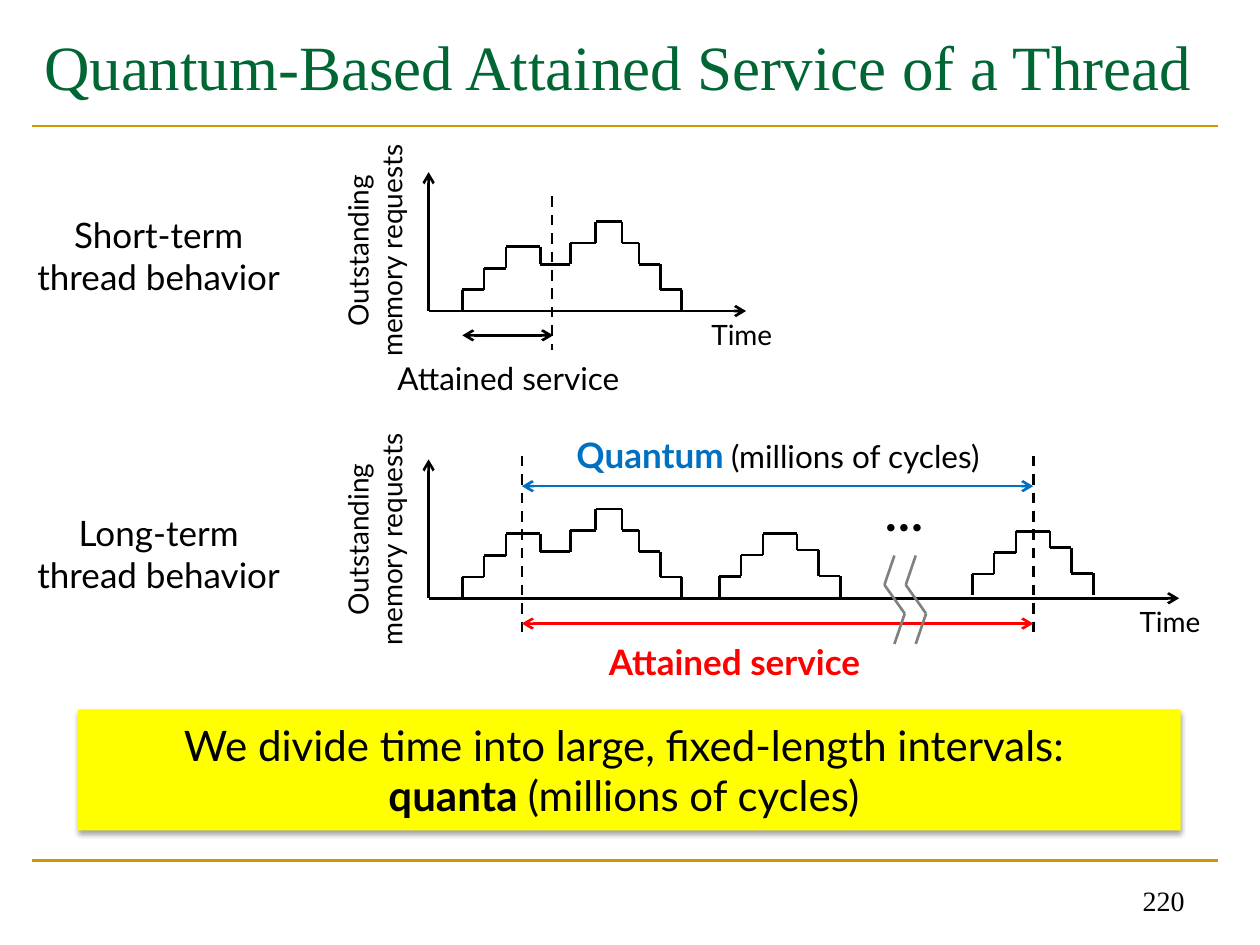
"""Build the slide on quantum-based attained service of a thread."""
from itertools import pairwise

from lxml.etree import SubElement
from pptx import Presentation
from pptx.dml.color import RGBColor
from pptx.enum.dml import MSO_LINE
from pptx.enum.shapes import MSO_CONNECTOR, MSO_SHAPE
from pptx.enum.text import MSO_ANCHOR, PP_ALIGN
from pptx.oxml.ns import qn
from pptx.util import Cm, Pt

BLACK, GREEN, GOLD, GRAY = "000000", "006633", "CC9900", "808080"
RED, BLUE, YELLOW = "FF0000", "0070C0", "FFFF00"
SANS, SERIF = "Lato", "Times New Roman"

TITLE = "Quantum-Based Attained Service of a Thread"
TITLE_BOX = (0.64, 0.43, 23.93, 2.97)
PAGE_NUMBER = "220"
PAGE_NUMBER_BOX = (18.21, 17.35, 5.92, 1.27)
RULE_LEFT, RULE_RIGHT, RULE_TOPS = 0.64, 24.56, (2.54, 17.35)

AXIS_LEFT, AXIS_HEIGHT = 8.64, 2.8
CHARTS = [
    {"name": "Short-term\nthread behavior", "name_top": 4.17, "label_top": 4.24,
     "base": 6.27, "axis_right": 15.04, "time_left": 14},
    {"name": "Long-term\nthread behavior", "name_top": 10.19, "label_top": 10.06,
     "base": 12.06, "axis_right": 23.77, "time_left": 22.63},
]

DOUBLE_EDGES = (0, 0.44, 0.88, 1.57, 2.18, 2.69, 3.22, 3.56, 3.99, 4.42)
DOUBLE_LEVELS = (0.43, 0.86, 1.3, 0.94, 1.37, 1.8, 1.37, 0.94, 0.43)
SINGLE_EDGES = (0, 0.44, 0.88, 1.57, 2, 2.44)
SINGLE_LEVELS = (0.42, 0.85, 1.28, 0.95, 0.43)
BURSTS = [
    (9.32, 6.27, DOUBLE_EDGES, DOUBLE_LEVELS),
    (9.32, 12.06, DOUBLE_EDGES, DOUBLE_LEVELS),
    (14.5, 12.04, SINGLE_EDGES, SINGLE_LEVELS),
    (19.6, 11.99, SINGLE_EDGES, SINGLE_LEVELS),
]

DASHED_MARKS = [(11.13, 3.96, 7.06), (10.52, 9.19, 12.78), (20.83, 9.19, 12.78)]
SPANS = [(9.32, 11.15, 6.76, BLACK), (10.52, 20.83, 12.57, RED),
         (10.52, 20.83, 9.8, BLUE)]
AXIS_BREAK = [(18.03, 11.2), (17.83, 11.79), (18.24, 12.37), (18.03, 12.98)]
AXIS_BREAK_SHIFTS = (0, 0.43)

LABELS = [
    ((7.39, 7.11, 5.72, 1.04), [("Attained service", 18, BLACK, False)]),
    ((11.56, 12.78, 6.5, 1.12), [("Attained service", 20, RED, True)]),
    ((17.27, 9.6, 1.91, 1.45), [("…", 28, BLACK, True)]),
    ((10.72, 8.61, 9.93, 1.12), [("Quantum", 20, BLUE, True),
                                 (" ", 16, BLACK, False),
                                 ("(millions of cycles)", 18, BLACK, False)]),
]
MESSAGE_BOX = (1.57, 14.3, 22.23, 2.44)
MESSAGE = [
    [("We divide time into large, fixed-length intervals: ", 24, BLACK, False)],
    [("quanta ", 24, BLACK, True), ("(millions of cycles) ", 24, BLACK, False)],
]


def color(value):
    return RGBColor.from_string(value)


def write(shape, paragraphs, font=SANS, align=PP_ALIGN.CENTER, anchor=MSO_ANCHOR.TOP):
    frame = shape.text_frame
    frame.word_wrap = True
    frame.vertical_anchor = anchor
    for index, pieces in enumerate(paragraphs):
        paragraph = frame.add_paragraph() if index else frame.paragraphs[0]
        paragraph.alignment = align
        for text, size, shade, bold in pieces:
            for row, line in enumerate(text.split("\n")):
                if row:
                    paragraph.add_line_break()
                run = paragraph.add_run()
                run.text = line
                run.font.name = font
                run.font.size = Pt(size)
                run.font.bold = bold
                run.font.color.rgb = color(shade)


def add_text(slide, box, pieces, **options):
    shape = slide.shapes.add_textbox(*map(Cm, box))
    write(shape, [pieces], **options)
    return shape


def add_line(slide, start, end, shade=BLACK, arrows=(), dashed=False):
    connector = slide.shapes.add_connector(
        MSO_CONNECTOR.STRAIGHT, *map(Cm, (*start, *end)))
    connector.line.color.rgb = color(shade)
    connector.line.width = Pt(1.5)
    if dashed:
        connector.line.dash_style = MSO_LINE.DASH
    properties = connector.line._get_or_add_ln()
    for arrow in arrows:
        SubElement(properties, qn(f"a:{arrow}"), type="arrow")
    SubElement(connector._element.spPr, qn("a:effectLst"))


def add_polyline(slide, points, shade=BLACK):
    for start, end in pairwise(points):
        add_line(slide, start, end, shade)


def burst_points(left, base, edges, levels):
    heights = (0, *levels, 0)
    return [(left + edge, base - height)
            for index, edge in enumerate(edges)
            for height in heights[index:index + 2]]


def add_chart_frame(slide, chart):
    base = chart["base"]
    origin = (AXIS_LEFT, base)
    for end in ((AXIS_LEFT, base - AXIS_HEIGHT), (chart["axis_right"], base)):
        add_line(slide, origin, end, arrows=["tailEnd"])
    add_text(slide, (0.43, chart["name_top"], 5.54, 1.96),
             [(chart["name"], 20, BLACK, False)])
    add_text(slide, (chart["time_left"], base, 1.91, 0.94),
             [("Time", 16, BLACK, False)])
    label = add_text(slide, (4.88, chart["label_top"], 5.36, 1.63),
                     [("Outstanding memory requests", 16, BLACK, False)])
    label.rotation = 270


def add_message(slide):
    shape = slide.shapes.add_shape(MSO_SHAPE.RECTANGLE, *map(Cm, MESSAGE_BOX))
    shape.fill.solid()
    shape.fill.fore_color.rgb = color(YELLOW)
    shape.line.fill.background()
    shape.shadow.inherit = False
    effects = shape._element.spPr.find(qn("a:effectLst"))
    shadow = SubElement(effects, qn("a:outerShdw"), blurRad=str(Pt(3.1)),
                        dist=str(Pt(1.8)), dir="5400000", rotWithShape="0")
    shade = SubElement(shadow, qn("a:srgbClr"), val=BLACK)
    SubElement(shade, qn("a:alpha"), val="35000")
    write(shape, MESSAGE, anchor=MSO_ANCHOR.MIDDLE)


def main():
    presentation = Presentation()
    presentation.slide_width, presentation.slide_height = Cm(25.4), Cm(19.05)
    slide = presentation.slides.add_slide(presentation.slide_layouts[6])

    for top in RULE_TOPS:
        add_line(slide, (RULE_LEFT, top), (RULE_RIGHT, top), GOLD)
    add_text(slide, TITLE_BOX, [(TITLE, 36, GREEN, False)],
             font=SERIF, align=PP_ALIGN.LEFT)
    add_text(slide, PAGE_NUMBER_BOX, [(PAGE_NUMBER, 16, BLACK, False)],
             font=SERIF, align=PP_ALIGN.RIGHT, anchor=MSO_ANCHOR.BOTTOM)

    for chart in CHARTS:
        add_chart_frame(slide, chart)
    for burst in BURSTS:
        add_polyline(slide, burst_points(*burst))
    for left, top, bottom in DASHED_MARKS:
        add_line(slide, (left, top), (left, bottom), dashed=True)
    for left, right, top, shade in SPANS:
        add_line(slide, (left, top), (right, top), shade, ["headEnd", "tailEnd"])
    for shift in AXIS_BREAK_SHIFTS:
        add_polyline(slide, [(x + shift, y) for x, y in AXIS_BREAK], GRAY)
    for box, pieces in LABELS:
        add_text(slide, box, pieces)
    add_message(slide)

    presentation.save("out.pptx")


if __name__ == "__main__":
    main()
